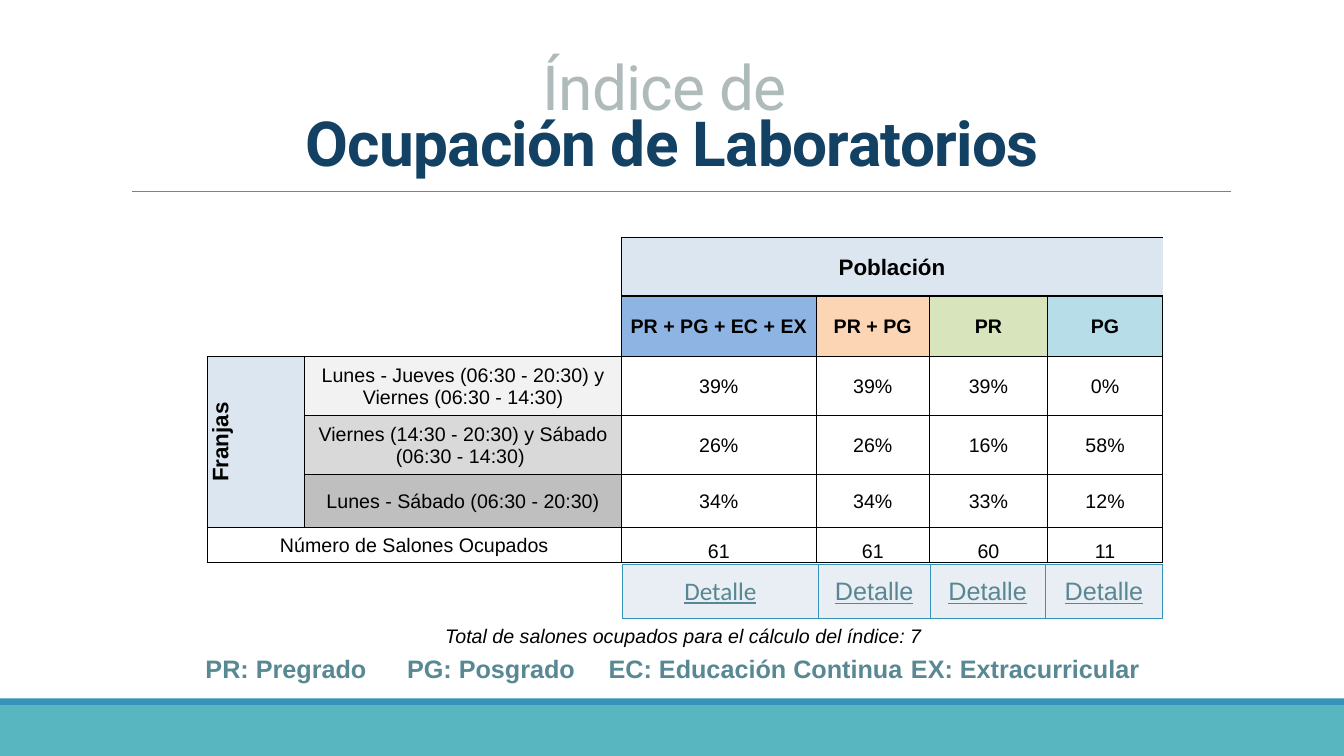
from dataclasses import dataclass

from lxml import etree
from pptx import Presentation, util as u
from pptx.dml.color import RGBColor
from pptx.enum import shapes, text
from pptx.oxml import ns

BLACK = RGBColor(0, 0, 0)
WHITE = RGBColor(0xFF, 0xFF, 0xFF)
GRAY = RGBColor(0x80, 0x80, 0x80)
SILVER = RGBColor(0xAF, 0xBA, 0xBB)
NAVY = RGBColor(0x13, 0x41, 0x63)
TEAL = RGBColor(0x58, 0xB6, 0xC0)
BLUE = RGBColor(0x34, 0x94, 0xBA)
SLATE = RGBColor(0x58, 0x88, 0x94)
LINK = RGBColor(0x57, 0x87, 0x93)
LINK_FILL = RGBColor(0xE8, 0xEE, 0xF3)
HEADING_FILL = RGBColor(0xDC, 0xE6, 0xF1)
POPULATION_FILLS = [
    RGBColor(0x8D, 0xB4, 0xE2),
    RGBColor(0xFC, 0xD5, 0xB4),
    RGBColor(0xD8, 0xE4, 0xBC),
    RGBColor(0xB7, 0xDE, 0xE8),
]
SLOT_FILLS = [
    RGBColor(0xF2, 0xF2, 0xF2),
    RGBColor(0xD9, 0xD9, 0xD9),
    RGBColor(0xBF, 0xBF, 0xBF),
]


@dataclass(frozen=True)
class Style:
    size: float
    color: RGBColor = BLACK
    font: str = "Arial"
    bold: bool = False
    italic: bool = False
    underline: bool = False
    spacing: int = 0


@dataclass(frozen=True)
class Band:
    top: float
    height: float
    color: RGBColor


@dataclass(frozen=True)
class Label:
    lines: tuple
    styles: tuple
    box: tuple
    align: text.PP_ALIGN = text.PP_ALIGN.CENTER
    anchor: text.MSO_ANCHOR = text.MSO_ANCHOR.TOP
    line_spacing: float = 1.0
    wrap: bool = True


HEADING = Style(16, bold=True)
POPULATION = Style(14, bold=True)
BODY = Style(14)

BANDS = [Band(17.78, 1.27, TEAL), Band(17.6, 0.18, BLUE)]
LABELS = [
    Label(("Índice de ", "Ocupación de Laboratorios"),
          (Style(44.4, SILVER, "Roboto", spacing=-50),
           Style(44.4, NAVY, "Roboto", bold=True, spacing=-50)),
          (0, 1.42, 33.87, 3.18), anchor=text.MSO_ANCHOR.BOTTOM, line_spacing=0.75),
    Label(("Total de salones ocupados para el cálculo del índice: 7",),
          (Style(14, italic=True),), (10.97, 15.6, 12.57, 1.45),
          align=text.PP_ALIGN.LEFT, wrap=False),
    Label(("PR: Pregrado\tPG: Posgrado\tEC: Educación Continua\tEX: Extracurricular",),
          (Style(18, SLATE, bold=True),), (3.61, 16.33, 26.67, 1.02)),
]
ROWS = [
    ["", "", "Población", "", "", ""],
    ["", "", "PR + PG + EC + EX", "PR + PG", "PR", "PG"],
    ["Franjas", "Lunes - Jueves (06:30 - 20:30) y Viernes (06:30 - 14:30)",
     "39%", "39%", "39%", "0%"],
    ["", "Viernes (14:30 - 20:30) y Sábado (06:30 - 14:30) ", "26%", "26%", "16%", "58%"],
    ["", "Lunes - Sábado (06:30 - 20:30)", "34%", "34%", "33%", "12%"],
    ["Número de Salones Ocupados", "", "61", "61", "60", "11"],
]
COLUMN_WIDTHS = [2.46, 7.98, 4.91, 2.85, 2.98, 2.9]
ROW_HEIGHTS = [1.48, 1.53, 1.48, 1.49, 1.33, 0.89]
DETAIL_WIDTHS = [4.93, 2.82, 2.9, 2.96]
THICK_ROWS = {0, 1, 2, 5, 6}
THICK_COLUMNS = {0, 2, 6}


def format_run(run, style: Style) -> None:
    font = run.font
    font.name, font.size = style.font, u.Pt(style.size)
    font.bold, font.italic, font.underline = style.bold, style.italic, style.underline
    font.color.rgb = style.color
    if style.spacing:
        run._r.get_or_add_rPr().set("spc", str(style.spacing))


def draw_band(slide, band: Band) -> None:
    shape = slide.shapes.add_shape(shapes.MSO_SHAPE.RECTANGLE, 0, u.Cm(band.top),
                                   u.Cm(33.87), u.Cm(band.height))
    shape.shadow.inherit = False
    shape.fill.solid()
    shape.fill.fore_color.rgb = band.color
    shape.line.fill.background()


def draw_rule(slide) -> None:
    rule = slide.shapes.add_connector(shapes.MSO_CONNECTOR.STRAIGHT, u.Cm(3.33),
                                      u.Cm(4.82), u.Cm(31.01), u.Cm(4.82))
    rule.line.color.rgb = GRAY
    rule.line.width = u.Pt(0.5)
    etree.SubElement(rule._element.spPr, ns.qn("a:effectLst"))


def draw_label(slide, label: Label) -> None:
    frame = slide.shapes.add_textbox(*(u.Cm(length) for length in label.box)).text_frame
    frame.word_wrap = label.wrap
    frame.vertical_anchor = label.anchor
    frame.text = "\n".join(label.lines)
    for paragraph, style in zip(frame.paragraphs, label.styles):
        paragraph.alignment = label.align
        paragraph.line_spacing = label.line_spacing
        paragraph._p.get_or_add_pPr().set("defTabSz", str(u.Cm(2.54)))
        for run in paragraph.runs:
            format_run(run, style)


def add_border(cell, side: str, color: RGBColor, width: float) -> None:
    line = etree.SubElement(cell._tc.get_or_add_tcPr(), ns.qn(f"a:ln{side}"))
    line.set("w", str(u.Pt(width)))
    if width:
        fill = etree.SubElement(line, ns.qn("a:solidFill"))
        etree.SubElement(fill, ns.qn("a:srgbClr")).set("val", str(color))
    else:
        etree.SubElement(line, ns.qn("a:noFill"))


def fill_cell(cell, wording: str, style: Style, color: RGBColor) -> None:
    cell.margin_left = cell.margin_right = cell.margin_top = u.Cm(0.03)
    cell.margin_bottom = 0
    cell.vertical_anchor = text.MSO_ANCHOR.MIDDLE
    cell.fill.solid()
    cell.fill.fore_color.rgb = color
    cell.text_frame.text = wording
    paragraph = cell.text_frame.paragraphs[0]
    paragraph.alignment = text.PP_ALIGN.CENTER
    paragraph.font.size = u.Pt(style.size)
    for run in paragraph.runs:
        format_run(run, style)


def add_plain_table(slide, left: float, top: float, widths: list, heights: list):
    table = slide.shapes.add_table(len(heights), len(widths), u.Cm(left), u.Cm(top),
                                   u.Cm(sum(widths)), u.Cm(sum(heights))).table
    table.first_row = table.horz_banding = False
    for column, width in zip(table.columns, widths):
        column.width = u.Cm(width)
    for row, height in zip(table.rows, heights):
        row.height = u.Cm(height)
    return table


def region(row: int, column: int) -> tuple:
    if not (0 <= row < 6 and 0 <= column < 6) or (row < 2 and column < 2):
        return ("blank",)
    if row == 0:
        return ("población",)
    if column == 0 and row < 5:
        return ("franjas",)
    if row == 5 and column < 2:
        return ("salones",)
    return (row, column)


def cell_look(row: int, column: int) -> tuple[Style, RGBColor]:
    if region(row, column) in (("población",), ("franjas",)):
        return HEADING, HEADING_FILL
    if row == 1 and column >= 2:
        return POPULATION, POPULATION_FILLS[column - 2]
    if column == 1 and 2 <= row < 5:
        return BODY, SLOT_FILLS[row - 2]
    return BODY, WHITE


def draw_occupancy_table(slide) -> None:
    table = add_plain_table(slide, 5.22, 5.98, COLUMN_WIDTHS, ROW_HEIGHTS)
    for row, wordings in enumerate(ROWS):
        for column, wording in enumerate(wordings):
            cell = table.cell(row, column)
            edges = (("L", 0, -1, column in THICK_COLUMNS),
                     ("R", 0, 1, column + 1 in THICK_COLUMNS),
                     ("T", -1, 0, row in THICK_ROWS),
                     ("B", 1, 0, row + 1 in THICK_ROWS))
            for side, down, across, thick in edges:
                visible = region(row, column) != region(row + down, column + across)
                add_border(cell, side, BLACK, (1 if thick else 0.5) if visible else 0)
            fill_cell(cell, wording, *cell_look(row, column))
            if row == 5 and column >= 2:
                cell.vertical_anchor = text.MSO_ANCHOR.BOTTOM
    table.cell(0, 2).merge(table.cell(0, 5))
    table.cell(2, 0).merge(table.cell(4, 0))
    table.cell(5, 0).merge(table.cell(5, 1))
    table.cell(2, 0)._tc.get_or_add_tcPr().set("vert", "vert270")


def draw_detail_table(slide) -> None:
    table = add_plain_table(slide, 15.69, 14.22, DETAIL_WIDTHS, [1.36])
    for column, cell in enumerate(table.rows[0].cells):
        for side in "LRTB":
            add_border(cell, side, BLUE, 1)
        font = "Arial" if column else "Calibri"
        fill_cell(cell, "Detalle", Style(18, LINK, font, underline=True), LINK_FILL)


def main() -> None:
    presentation = Presentation()
    presentation.slide_width, presentation.slide_height = u.Cm(33.87), u.Cm(19.05)
    slide = presentation.slides.add_slide(presentation.slide_layouts[6])
    for band in BANDS:
        draw_band(slide, band)
    draw_rule(slide)
    for label in LABELS:
        draw_label(slide, label)
    draw_occupancy_table(slide)
    draw_detail_table(slide)
    presentation.save("out.pptx")


if __name__ == "__main__":
    main()
